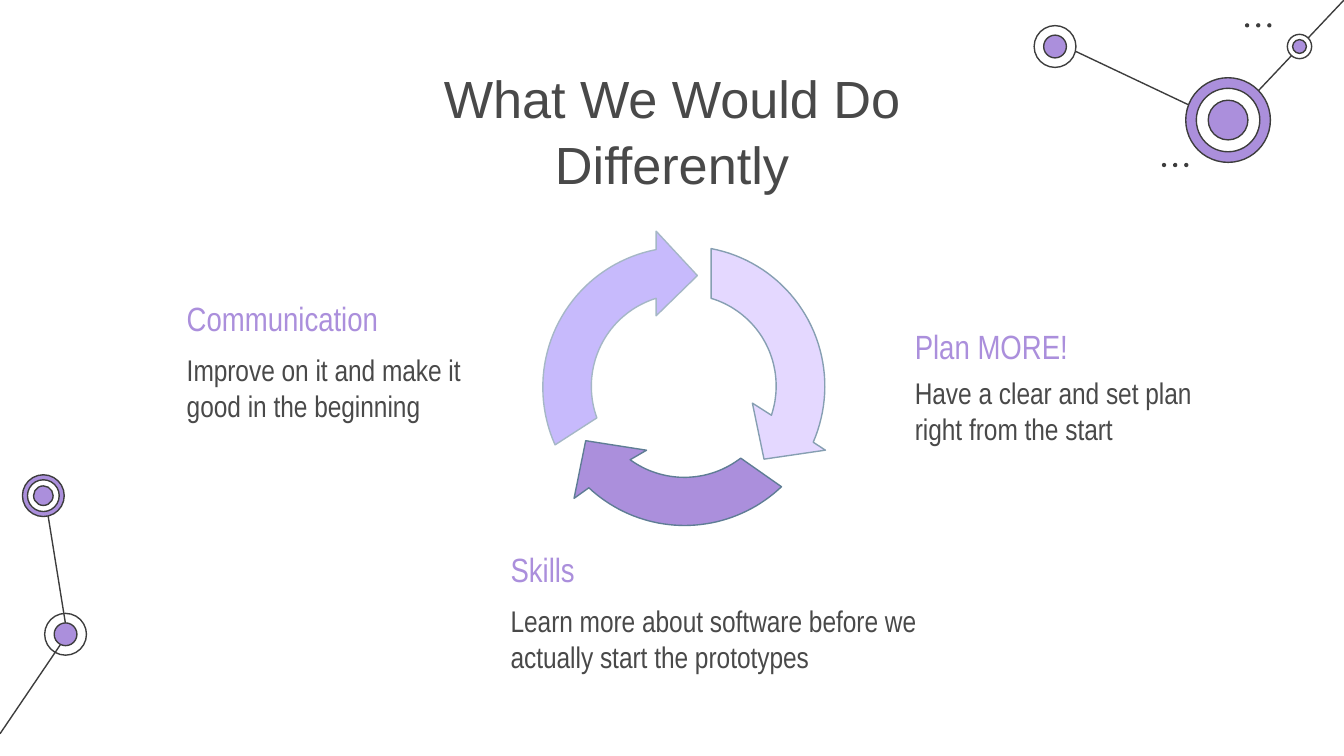
from math import atan2, cos, hypot, sin, tau

from lxml import etree
from pptx import Presentation
from pptx.dml.color import RGBColor
from pptx.enum.shapes import MSO_CONNECTOR, MSO_SHAPE
from pptx.enum.text import MSO_ANCHOR, PP_ALIGN
from pptx.oxml.ns import qn
from pptx.util import Cm, Pt

STRAIGHT = MSO_CONNECTOR.STRAIGHT
OVAL = MSO_SHAPE.OVAL
TOP, MIDDLE = MSO_ANCHOR.TOP, MSO_ANCHOR.MIDDLE
LEFT, CENTER = PP_ALIGN.LEFT, PP_ALIGN.CENTER

COLORS = {
    "ink": "3D3D3D", "text": "494949", "purple": "AB8FDC", "white": "FFFFFF",
    "lavender": "C7BAFC", "lavender edge": "A5B7C6",
    "lilac": "E4D8FF", "lilac edge": "869FB2", "purple edge": "5F7D95",
}
HEADING = {"size": 18, "color": "purple", "height": 1.02}
BODY = {"size": 16, "color": "text", "height": 1.7}

CYCLE_CENTER = (12.93, 7.28)
ARC_STEPS = 40
DOT_SIZE, DOT_PITCH = 0.08, 0.21

LINKS = [
    ((1.27, 11.99), (0.84, 9.32)),
    ((0, 13.87), (1.24, 12.04)),
    ((23.22, 2.34), (19.99, 0.81)),
    ((25.4, 0), (23.22, 2.31)),
]
# Centre, then (diameter, fill) from the outer ring inwards
NODES = [
    ((1.24, 11.99), [(0.79, None), (0.43, "purple")]),
    ((0.82, 9.37), [(0.79, "purple"), (0.6, "white"), (0.37, "purple")]),
    ((23.21, 2.27), [(1.6, "purple"), (1.2, "white"), (0.75, "purple")]),
    ((19.94, 0.88), [(0.79, "white"), (0.43, "purple")]),
    ((24.56, 0.88), [(0.46, "white"), (0.26, "purple")]),
]
DOT_ROWS = [(23.57, 0.48), (22, 3.12)]
# Fill, edge, outer tail and neck, head (outer wing, tip, inner wing), inner tail and neck
ARROWS = [
    ("lavender", "lavender edge", [(10.49, 8.41), (12.4, 4.72)],
     [(12.4, 4.37), (13.18, 5.21), (12.4, 5.97)], [(11.28, 7.9), (12.4, 5.64)]),
    ("lilac", "lilac edge", [(13.44, 4.7), (15.37, 8.36)],
     [(15.6, 8.51), (14.44, 8.68), (14.22, 7.62)], [(13.44, 5.64), (14.58, 7.85)]),
    ("purple", "purple edge", [(14.77, 9.2), (11.13, 9.22)],
     [(10.85, 9.42), (11.07, 8.33), (12.22, 8.51)], [(14, 8.66), (11.91, 8.69)]),
]
# Heading, its place, heading width and anchor; then the same for the body
LESSONS = [
    ("Communication", (3.28, 5.51), 5.56, MIDDLE,
     "Improve on it and make it good in the beginning", (3.28, 6.4), 6.12, TOP),
    ("Plan MORE!", (17.04, 5.92), 5.56, TOP,
     "Have a clear and set plan right from the start", (17.04, 6.91), 6.12, MIDDLE),
    ("Skills", (9.4, 10.13), 5.56, TOP,
     "Learn more about software before we actually start the prototypes",
     (9.4, 11.15), 8.43, TOP),
]


def rgb(color):
    return RGBColor.from_string(COLORS[color])


def arc(start, end):
    """Points clockwise around the cycle's centre, easing between the two radii."""
    cx, cy = CYCLE_CENTER
    (x0, y0), (x1, y1) = [(x - cx, y - cy) for x, y in (start, end)]
    angle, radius = atan2(y0, x0), hypot(x0, y0)
    sweep, growth = (atan2(y1, x1) - angle) % tau, hypot(x1, y1) - radius
    points = []
    for step in range(ARC_STEPS + 1):
        t = step / ARC_STEPS
        r, a = radius + growth * t, angle + sweep * t
        points.append((cx + r * cos(a), cy + r * sin(a)))
    return points


class SlidePainter:
    def __init__(self, slide, font="Arial Narrow", line_width=0.75):
        self.slide = slide
        self.font = font
        self.line_width = line_width

    def paint(self, shape, fill, edge):
        shape.shadow.inherit = False
        if fill:
            shape.fill.solid()
            shape.fill.fore_color.rgb = rgb(fill)
        else:
            shape.fill.background()
        if edge:
            shape.line.color.rgb = rgb(edge)
            shape.line.width = Pt(self.line_width)
        else:
            shape.line.fill.background()

    def link(self, start, end):
        ends = [Cm(v) for v in (*start, *end)]
        line = self.slide.shapes.add_connector(STRAIGHT, *ends)
        line.line.color.rgb = rgb("ink")
        line.line.width = Pt(self.line_width)
        etree.SubElement(line._element.spPr, qn("a:effectLst"))

    def circle(self, center, diameter, fill, edge=None):
        x, y = [Cm(v - diameter / 2) for v in center]
        disc = self.slide.shapes.add_shape(OVAL, x, y, Cm(diameter), Cm(diameter))
        self.paint(disc, fill, edge)

    def node(self, center, rings):
        for diameter, fill in rings:
            self.circle(center, diameter, fill, "ink")

    def dots(self, x, y):
        for i in range(3):
            self.circle((x + i * DOT_PITCH, y), DOT_SIZE, "ink")

    def cycle_arrow(self, fill, edge, outer, head, inner):
        outline = arc(*outer) + head + arc(*inner)[::-1]
        first, *rest = [(Cm(x), Cm(y)) for x, y in outline]
        builder = self.slide.shapes.build_freeform(*first)
        builder.add_line_segments(rest, close=True)
        self.paint(builder.convert_to_shape(), fill, edge)

    def text(self, content, place, width, height, *, size, color,
             font=None, align=LEFT, anchor=TOP, spacing=None):
        box = self.slide.shapes.add_textbox(*map(Cm, (*place, width, height)))
        frame = box.text_frame
        frame.word_wrap = True
        frame.vertical_anchor = anchor
        frame.margin_left = frame.margin_right = Cm(0.25)
        frame.margin_top = frame.margin_bottom = Cm(0.25)
        paragraph = frame.paragraphs[0]
        paragraph.alignment = align
        paragraph.line_spacing = spacing
        run = paragraph.add_run()
        run.text = content
        run.font.name = font or self.font
        run.font.size = Pt(size)
        run.font.color.rgb = rgb(color)


def main():
    deck = Presentation()
    deck.slide_width, deck.slide_height = Cm(25.4), Cm(14.29)
    painter = SlidePainter(deck.slides.add_slide(deck.slide_layouts[6]))

    for start, end in LINKS:
        painter.link(start, end)
    for center, rings in NODES:
        painter.node(center, rings)
    for x, y in DOT_ROWS:
        painter.dots(x, y)

    painter.text("What We Would Do Differently", (6.45, 0.94), 12.5, 1.6,
                 size=28, color="text", font="Arial", align=CENTER, spacing=1.05)
    for arrow in ARROWS:
        painter.cycle_arrow(*arrow)
    for title, title_at, title_width, title_anchor, body, body_at, body_width, body_anchor in LESSONS:
        painter.text(title, title_at, title_width, anchor=title_anchor, **HEADING)
        painter.text(body, body_at, body_width, anchor=body_anchor, **BODY)

    deck.save("out.pptx")


if __name__ == "__main__":
    main()
